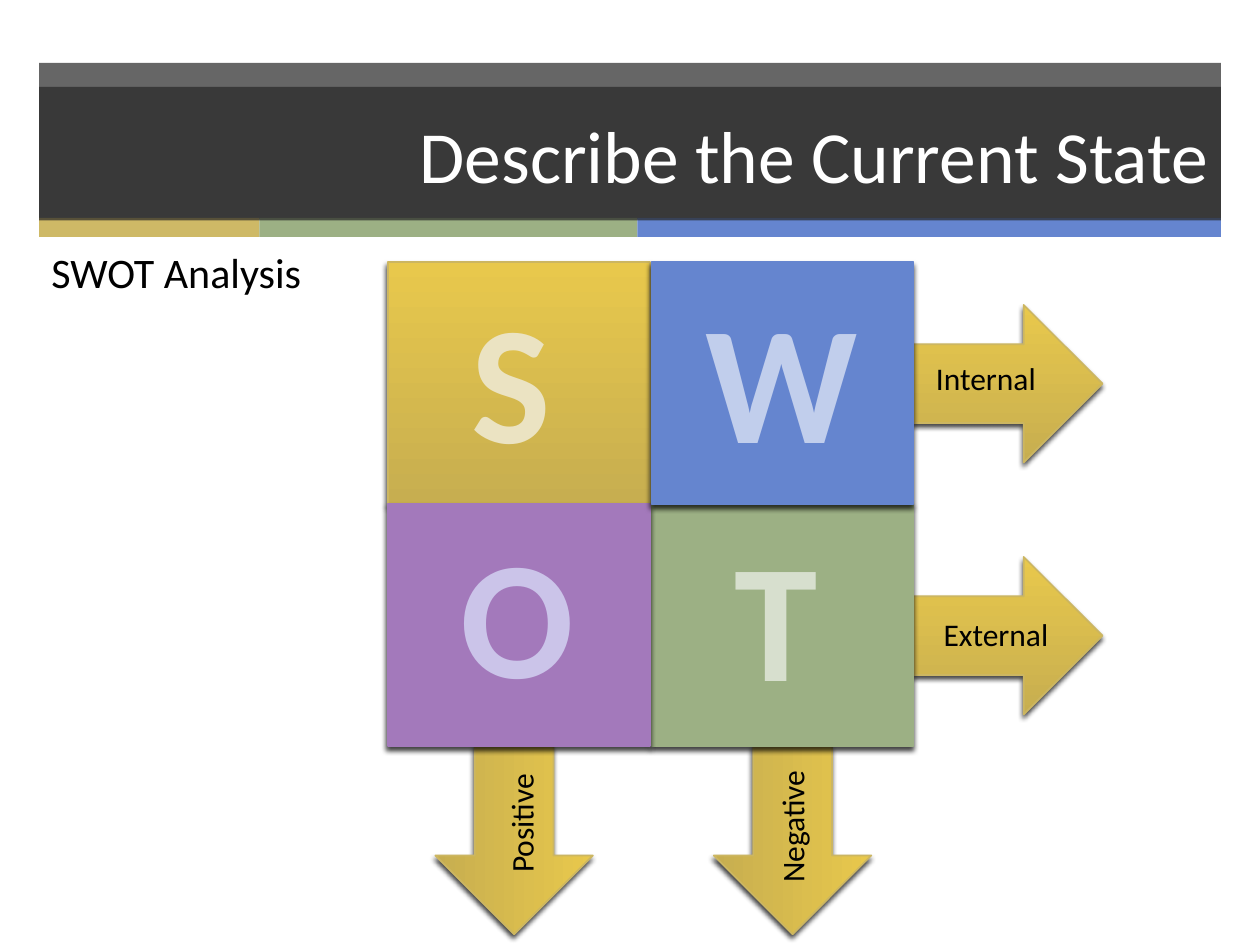
from lxml.etree import SubElement as Sub
from pptx import Presentation
from pptx.dml.color import RGBColor
from pptx.enum.shapes import MSO_SHAPE as Kind
from pptx.enum.text import MSO_ANCHOR as Anchor, MSO_AUTO_SIZE as Size, PP_ALIGN as Align
from pptx.oxml.ns import qn
from pptx.util import Inches, Pt

GOLD, EDGE = ("C7AE50", "E8C84C"), "CCB661"
GREEN, BLUE, PURPLE, DARK = "9CB084", "6585CF", "A379BB", "262626"


def color(text):
    return RGBColor.from_string(text)


def write(frame, text, size=18, fill="000000", bold=False, align=Align.LEFT):
    para = frame.paragraphs[0]
    para.alignment = align
    run = para.add_run()
    run.text = text
    font = run.font
    font.name, font.size, font.bold = "Calibri", Pt(size), bold
    font.color.rgb = color(fill)


def paint(shape, fill, alpha=None):
    """Fill with one colour, or with a (bottom, top) gradient."""
    if isinstance(fill, tuple):
        shape.fill.gradient()
        shape.fill.gradient_angle = 90
        for stop, tone in zip(shape.fill.gradient_stops, fill):
            stop.color.rgb = color(tone)
        return
    shape.fill.solid()
    shape.fill.fore_color.rgb = color(fill)
    if alpha:
        tone = shape._element.spPr.find(".//" + qn("a:srgbClr"))
        Sub(tone, qn("a:alpha"), val=str(alpha * 1000))


def shade(shape):
    """Add the soft drop shadow below the shape."""
    effects = shape._element.spPr.find(qn("a:effectLst"))
    outer = Sub(effects, qn("a:outerShdw"), blurRad=str(Pt(3)), dist=str(Pt(2)),
                dir=str(110 * 60000), algn="ctr", rotWithShape="0")
    tone = Sub(outer, qn("a:srgbClr"), val="000000")
    Sub(tone, qn("a:alpha"), val="75000")


class Deck:
    def __init__(self):
        self.show = Presentation()
        self.show.slide_width, self.show.slide_height = Inches(10), Inches(7.5)
        self.slide = self.show.slides.add_slide(self.show.slide_layouts[5])
        self.shapes = self.slide.shapes

    def block(self, x, y, w, h, fill, kind=Kind.RECTANGLE, line=None, alpha=None, turn=0):
        shape = self.shapes.add_shape(kind, Inches(x), Inches(y), Inches(w), Inches(h))
        shape.rotation = turn
        shape.shadow.inherit = False
        paint(shape, fill, alpha)
        if line:
            shape.line.color.rgb = color(line)
            shape.line.width = Pt(1)
            shade(shape)
        else:
            shape.line.fill.background()

    def arrow(self, x, y, turn=0):
        self.block(x, y, 1.5, 1.25, GOLD, Kind.RIGHT_ARROW, EDGE, turn=turn)

    def label(self, text, x, y, w=1.61, h=0.4, turn=0, **style):
        box = self.shapes.add_textbox(Inches(x), Inches(y), Inches(w), Inches(h))
        box.rotation = turn
        box.text_frame.word_wrap = True
        write(box.text_frame, text, **style)

    def title(self, text, x, y, w, h):
        title = self.shapes.title
        title.left, title.top, title.width, title.height = map(Inches, (x, y, w, h))
        paint(title, DARK, 70)
        frame = title.text_frame
        frame.auto_size, frame.vertical_anchor = Size.NONE, Anchor.MIDDLE
        write(frame, text, size=42, fill="FFFFFF", align=Align.RIGHT)
        # Bring the title in front of the band
        self.shapes._spTree.append(title._element)


def main():
    deck = Deck()

    # Header band, colour strip and title
    deck.block(0.31, 0.5, 9.38, 1.24, DARK, alpha=70)
    left = 0.31
    for width, fill in ((1.75, "CEB966"), (3, GREEN), (4.63, BLUE)):
        deck.block(left, 1.73, width, 0.15, fill)
        left += width
    deck.title("Describe the Current State", 0.31, 0.69, 9.38, 1.06)
    deck.label("SWOT Analysis", 0.31, 1.91, 3.44, 0.5, size=24)

    # Arrows behind the grid
    for x in (5.54, 3.33):
        deck.arrow(x, 6.04, turn=90)
    for y in (2.42, 4.42):
        deck.arrow(7.25, y)

    # Grid of four squares, back to front
    wide, high = 2.08, 1.92
    for col, row, fill, line in ((0, 0, GOLD, EDGE), (1, 1, GREEN, GREEN),
                                 (0, 1, PURPLE, PURPLE), (1, 0, BLUE, BLUE)):
        deck.block(3.08 + col * 2.09, 2.08 + row * high, wide, high, fill, line=line)

    # Letters
    for text, x, y, fill in (("S", 3.64, 2.14, "EBE3C2"), ("W", 5.5, 2.14, "C1CEEC"),
                             ("O", 3.56, 4, "CBC4E9"), ("T", 5.73, 4.03, "D7DFCE")):
        deck.label(text, x, y, h=1.72, size=96, fill=fill, bold=True)

    # Arrow labels
    for text, x, y, turn in (("Internal", 7.33, 2.8, 0), ("External", 7.39, 4.83, 0),
                             ("Positive", 3.33, 6.02, 270), ("Negative", 5.48, 6.1, 270)):
        deck.label(text, x, y, turn=turn)

    deck.show.save("out.pptx")


if __name__ == "__main__":
    main()
